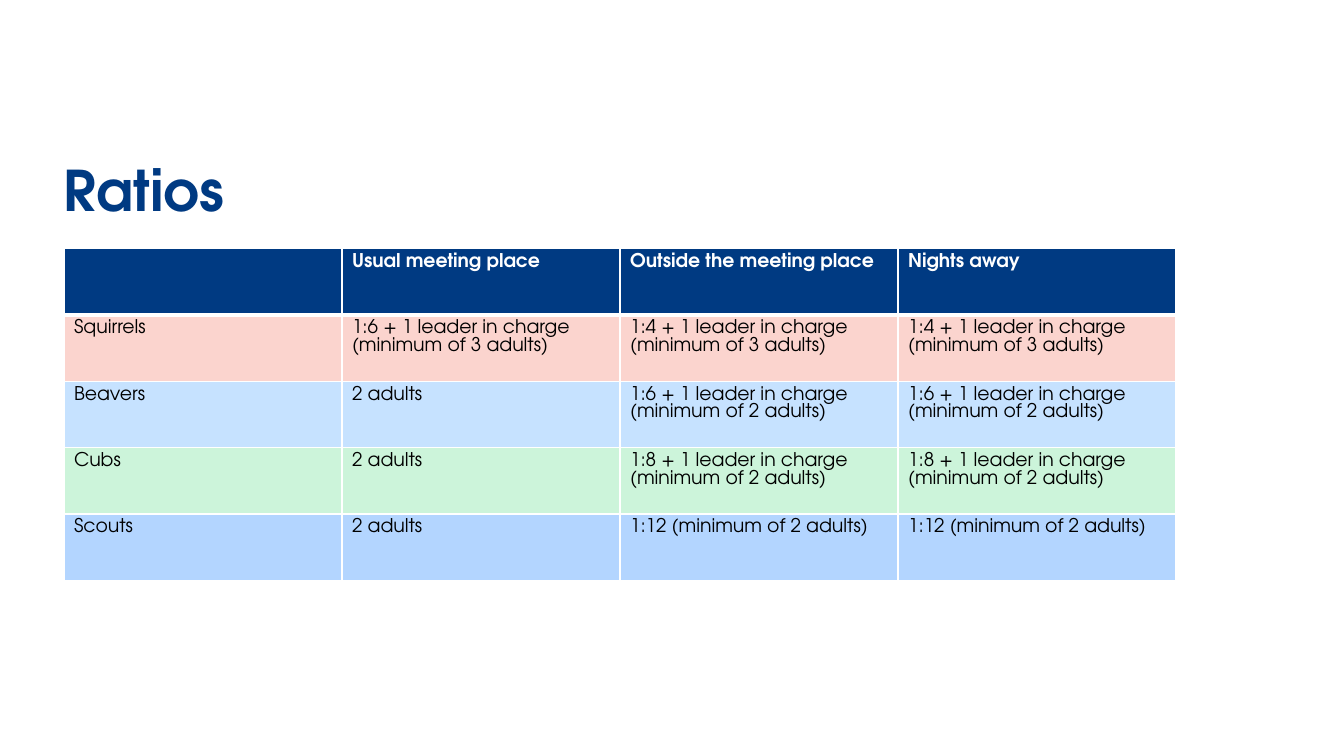
"""Build a slide with a table of adult-to-young-person ratios."""
from lxml.etree import SubElement
from pptx import Presentation
from pptx.dml.color import RGBColor as Rgb
from pptx.enum.text import MSO_ANCHOR as Anchor, MSO_AUTO_SIZE as AutoSize, PP_ALIGN as Align
from pptx.oxml.ns import qn
from pptx.util import Pt

TITLE = "Ratios"
ROWS = [
    ("navy", ["", "Usual meeting place", "Outside the meeting place", "Nights away"]),
    ("pink", ["Squirrels", "1:6 + 1 leader in charge (minimum of 3 adults)",
              "1:4 + 1 leader in charge (minimum of 3 adults)",
              "1:4 + 1 leader in charge (minimum of 3 adults)"]),
    ("sky", ["Beavers", "2 adults", "1:6 + 1 leader in charge (minimum of 2 adults)",
             "1:6 + 1 leader in charge (minimum of 2 adults)"]),
    ("mint", ["Cubs", "2 adults", "1:8 + 1 leader in charge (minimum of 2 adults)",
              "1:8 + 1 leader in charge (minimum of 2 adults)"]),
    ("blue", ["Scouts", "2 adults", "1:12 (minimum of 2 adults)", "1:12 (minimum of 2 adults)"]),
]
COLORS = {"navy": "003A82", "pink": "FBD4CE", "sky": "C6E2FF", "mint": "CCF4DA",
          "blue": "B3D5FF", "white": "FFFFFF", "black": "000000"}
FONT = "TeX Gyre Adventor"
LEFT, TABLE_TOP = 45.7, 177.5
COLUMN_WIDTH, ROW_HEIGHT = 198.6, 47.4


def style_text(paragraph, size, color, bold):
    """Format every run of a paragraph."""
    for run in paragraph.runs:
        run.font.name, run.font.size, run.font.bold = FONT, Pt(size), bold
        run.font.color.rgb = Rgb.from_string(COLORS[color])


def add_borders(cell, widths):
    """Draw white cell borders, widths keyed by side."""
    properties = cell._tc.get_or_add_tcPr()
    for side, width in widths.items():
        line = SubElement(properties, qn(f"a:ln{side}"), w=str(Pt(width)))
        fill = SubElement(line, qn("a:solidFill"))
        SubElement(fill, qn("a:srgbClr"), val=COLORS["white"])


def add_title(slide):
    """Fill and place the title placeholder."""
    title = slide.shapes.title
    title.left, title.top, title.width, title.height = Pt(LEFT), Pt(111), Pt(332), Pt(48)
    frame = title.text_frame
    frame.text = TITLE
    frame.margin_left = frame.margin_top = frame.margin_right = frame.margin_bottom = 0
    frame.vertical_anchor, frame.auto_size = Anchor.BOTTOM, AutoSize.SHAPE_TO_FIT_TEXT
    frame.paragraphs[0].alignment = Align.LEFT
    style_text(frame.paragraphs[0], 40, "navy", True)


def add_ratio_table(slide):
    """Add the table with one colour per row."""
    column_count = len(ROWS[0][1])
    table = slide.shapes.add_table(
        len(ROWS), column_count, Pt(LEFT), Pt(TABLE_TOP),
        Pt(COLUMN_WIDTH * column_count), Pt(ROW_HEIGHT * len(ROWS))).table
    for column in table.columns:
        column.width = Pt(COLUMN_WIDTH)
    for row_index, (fill, texts) in enumerate(ROWS):
        table.rows[row_index].height = Pt(ROW_HEIGHT)
        header = row_index == 0
        widths = {"L": 1, "R": 1, "T": 3 if row_index == 1 else 1, "B": 3 if header else 1}
        for column_index, text in enumerate(texts):
            cell = table.cell(row_index, column_index)
            cell.text_frame.text = text
            style_text(cell.text_frame.paragraphs[0], 13.5, "white" if header else "black", header)
            add_borders(cell, widths)
            cell.fill.solid()
            cell.fill.fore_color.rgb = Rgb.from_string(COLORS[fill])


def main():
    """Create and save the presentation."""
    presentation = Presentation()
    presentation.slide_width, presentation.slide_height = Pt(960), Pt(540)
    slide = presentation.slides.add_slide(presentation.slide_layouts[5])
    add_title(slide)
    add_ratio_table(slide)
    presentation.save("out.pptx")


if __name__ == "__main__":
    main()
